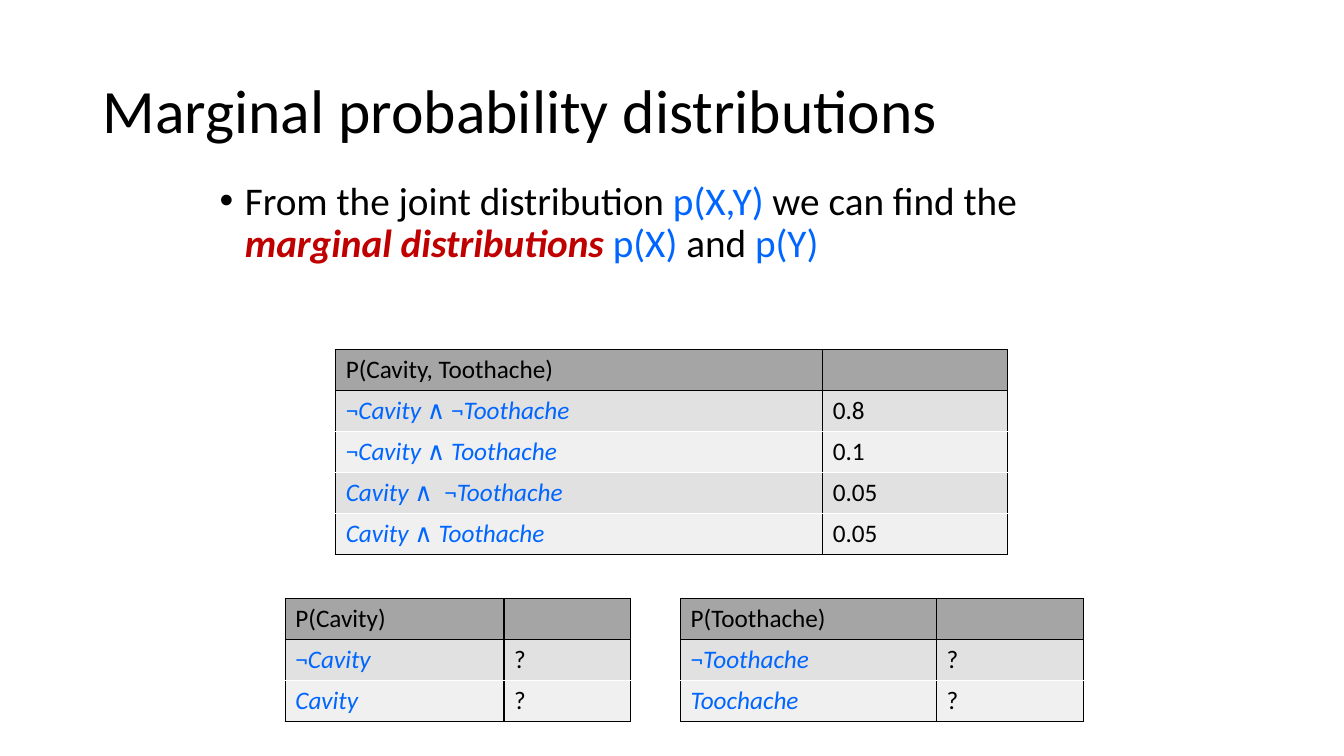
from dataclasses import dataclass
from itertools import groupby

from lxml.etree import SubElement
from pptx import Presentation
from pptx.dml.color import RGBColor as Rgb
from pptx.enum.text import MSO_ANCHOR as Anchor
from pptx.oxml.ns import qn
from pptx.util import Inches, Pt


@dataclass(frozen=True)
class Theme:
    """Colours, typeface and type sizes of the slide."""
    font: str = "Calibri"
    ink: str = "000000"
    math: str = "0066FF"
    term: str = "C00000"
    rule: str = "FFFFFF"
    header: str = "A5A5A5"
    bands: tuple = ("E1E1E1", "F0F0F0")
    title_size: int = 44
    body_size: int = 28
    table_size: int = 18
    line_width: float = 1


class SlideBuilder:
    """Draws text and probability tables on one slide."""

    def __init__(self, slide, theme):
        self.slide = slide
        self.theme = theme

    def style(self, paragraph, size, color=None):
        """Set the shared typeface, size and optional colour of a paragraph."""
        paragraph.font.name = self.theme.font
        paragraph.font.size = Pt(size)
        if color:
            paragraph.font.color.rgb = Rgb.from_string(color)

    def frame(self, left, top, width, height, anchor):
        """Add a wrapping text box and return its text frame."""
        box = self.slide.shapes.add_textbox(
            Inches(left), Inches(top), Inches(width), Inches(height))
        box.text_frame.word_wrap = True
        box.text_frame.vertical_anchor = anchor
        return box.text_frame

    def title(self, text, *place):
        """Add the slide title."""
        heading = self.frame(*place, Anchor.MIDDLE).paragraphs[0]
        heading.text = text
        heading.line_spacing = 0.9
        self.style(heading, self.theme.title_size, self.theme.ink)

    def bullet(self, pieces, *place):
        """Add one bulleted statement made of (text, colour) pieces."""
        statement = self.frame(*place, Anchor.TOP).paragraphs[0]
        statement.line_spacing = 0.9
        props = statement._p.get_or_add_pPr()
        props.set("marL", str(Inches(0.25)))
        props.set("indent", str(-Inches(0.25)))
        SubElement(props, qn("a:buFont"), typeface="Arial")
        SubElement(props, qn("a:buChar"), char="•")
        self.style(statement, self.theme.body_size)
        for text, color in pieces:
            run = statement.add_run()
            run.text = text
            run.font.color.rgb = Rgb.from_string(color)
            if color == self.theme.term:
                run.font.bold = run.font.italic = True

    def borders(self, cell, above, below):
        """Draw black cell sides and the given top and bottom lines."""
        props = cell._tc.get_or_add_tcPr()
        ink = self.theme.ink
        for side, color in zip("LRTB", (ink, ink, above, below)):
            line = SubElement(props, qn(f"a:ln{side}"),
                              w=str(Pt(self.theme.line_width)))
            fill = SubElement(line, qn("a:solidFill"))
            SubElement(fill, qn("a:srgbClr"), val=color)

    def event(self, paragraph, text):
        """Write an event with italic names and upright logic symbols."""
        for is_symbol, letters in groupby(text, lambda letter: letter in "¬∧"):
            run = paragraph.add_run()
            run.text = "".join(letters)
            run.font.italic = not is_symbol

    def distribution(self, name, outcomes, left, top, widths, height):
        """Add a table of outcomes and their probabilities."""
        theme = self.theme
        rows = [(name, ""), *outcomes]
        last = len(rows) - 1
        table = self.slide.shapes.add_table(
            len(rows), len(widths), Inches(left), Inches(top),
            Inches(sum(widths)), Inches(height)).table
        table.first_row = table.horz_banding = False
        for column, width in zip(table.columns, widths):
            column.width = Inches(width)
        for r, row in enumerate(rows):
            above = theme.ink if r <= 1 else theme.rule
            below = theme.ink if r in (0, last) else theme.rule
            shade = theme.bands[(r - 1) % 2] if r else theme.header
            for c, text in enumerate(row):
                cell = table.cell(r, c)
                self.borders(cell, above, below)
                cell.fill.solid()
                cell.fill.fore_color.rgb = Rgb.from_string(shade)
                paragraph = cell.text_frame.paragraphs[0]
                is_event = r > 0 and c == 0
                self.style(paragraph, theme.table_size,
                           theme.math if is_event else theme.ink)
                if is_event:
                    self.event(paragraph, text)
                elif text:
                    paragraph.add_run().text = text


def main():
    """Build and save the slide."""
    deck = Presentation()
    deck.slide_width, deck.slide_height = Inches(13.33), Inches(7.5)
    theme = Theme()
    page = SlideBuilder(deck.slides.add_slide(deck.slide_layouts[6]), theme)

    page.title("Marginal probability distributions", 0.92, 0.4, 11.5, 1.45)
    page.bullet([
        ("From the joint distribution ", theme.ink),
        ("p(X,Y)", theme.math),
        (" we can find the ", theme.ink),
        ("marginal distributions ", theme.term),
        ("p(X) ", theme.math),
        ("and ", theme.ink),
        ("p(Y)", theme.math),
    ], 2.08, 1.75, 9.17, 4.95)

    page.distribution("P(Cavity, Toothache)", [
        ("¬Cavity ∧ ¬Toothache", "0.8"),
        ("¬Cavity ∧ Toothache", "0.1"),
        ("Cavity ∧  ¬Toothache", "0.05"),
        ("Cavity ∧ Toothache", "0.05"),
    ], 3.33, 3.47, (4.83, 1.83), 2.03)
    page.distribution("P(Cavity)", [("¬Cavity", "?"), ("Cavity", "?")],
                      2.83, 5.94, (2.17, 1.25), 1.22)
    page.distribution("P(Toothache)", [("¬Toothache", "?"), ("Toochache", "?")],
                      6.75, 5.94, (2.54, 1.46), 1.22)
    deck.save("out.pptx")


if __name__ == "__main__":
    main()
